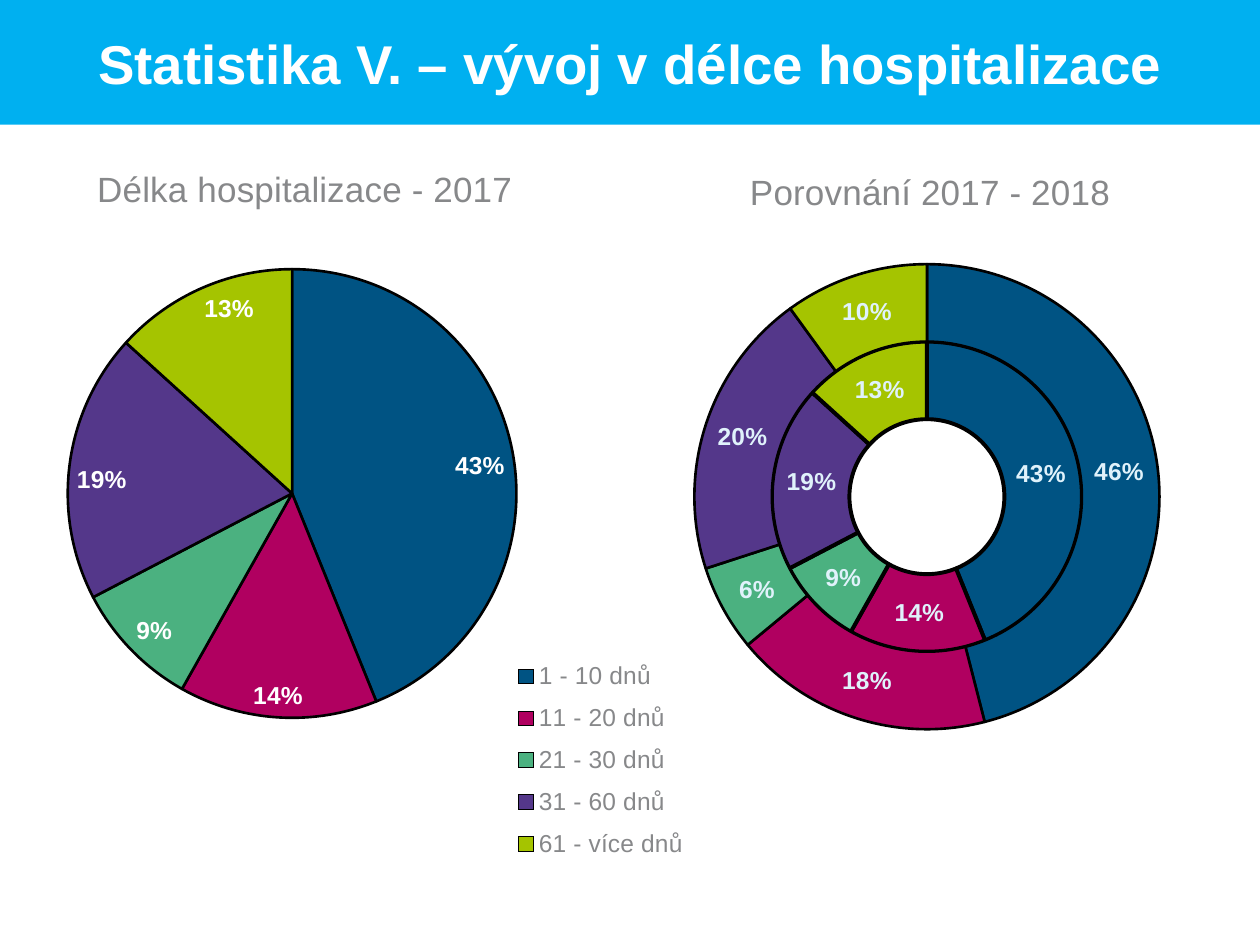
"""Build a slide comparing lengths of hospital stay in 2017 and 2018."""
from pptx import Presentation
from pptx import util as u
from pptx.chart.data import CategoryChartData
from pptx.dml.color import RGBColor
from pptx.enum import chart as charts, shapes, text
from pptx.oxml import parse_xml
from pptx.oxml.ns import nsdecls

GREY = "87888A"
SLICE_COLORS = ["005383", "B00060", "4BB180", "54378A", "A5C400"]
STAYS = ["1 - 10 dnů", "11 - 20 dnů", "21 - 30 dnů", "31 - 60 dnů", "61 - více dnů"]
SHARES_2017 = [43, 14, 9, 19, 13]
SHARES_2018 = [46, 18, 6, 20, 10]


def style_font(font, size, color, bold=False):
    font.name = "Arial"
    font.size = u.Pt(size)
    font.bold = bold
    font.color.rgb = RGBColor.from_string(color)


def set_layout(element, index, extent, inner=False):
    for old in element.xpath("c:layout"):
        element.remove(old)
    target = '<c:layoutTarget val="inner"/>' if inner else ""
    modes = "".join(f'<c:{axis}Mode val="edge"/>' for axis in "xy")
    sizes = "".join(f'<c:{key} val="{value}"/>' for key, value in zip("xywh", extent))
    element.insert(index, parse_xml(
        f'<c:layout {nsdecls("c")}><c:manualLayout>{target}{modes}{sizes}'
        "</c:manualLayout></c:layout>"))


deck = Presentation()
deck.slide_width, deck.slide_height = u.Inches(10), u.Inches(7.5)
page = deck.slides.add_slide(deck.slide_layouts[6])

chart_specs = [
    dict(kind=charts.XL_CHART_TYPE.PIE, frame=(0.28, 0.97, 5.51, 6.14),
         title="Délka hospitalizace - 2017", title_at=(0.08, 0.05),
         plot=(0.04, 0.19, 0.66, 0.58), categories=STAYS,
         rings=[SHARES_2017], lines=[1.5], label_color="FFFFFF",
         legend=(0.68, 0.68, 0.27, 0.29)),
    dict(kind=charts.XL_CHART_TYPE.DOUGHNUT, frame=(5.24, 0.92, 4.41, 5.35),
         title="Porovnání 2017 - 2018", title_at=(0.15, 0.07),
         plot=(0.06, 0.22, 0.84, 0.69), categories=["1", "2", "3", "4", "5"],
         rings=[SHARES_2017, SHARES_2018], lines=[2.25, 1.5], label_color="E0F2FB",
         legend=None),
]

for spec in chart_specs:
    data = CategoryChartData()
    data.categories = spec["categories"]
    for number, shares in enumerate(spec["rings"], 1):
        data.add_series(f"Series {number}", shares)
    frame = [u.Inches(value) for value in spec["frame"]]
    chart = page.shapes.add_chart(spec["kind"], *frame, data).chart
    style_font(chart.font, 18, "000000")

    chart.has_title = True
    chart.chart_title.text_frame.text = spec["title"]
    style_font(chart.chart_title.text_frame.paragraphs[0].runs[0].font, 20, GREY)
    set_layout(chart.element.xpath("c:chart/c:title")[0], 1, spec["title_at"])
    set_layout(chart.element.xpath("c:chart/c:plotArea")[0], 0, spec["plot"], inner=True)

    chart.has_legend = spec["legend"] is not None
    if chart.has_legend:
        chart.legend.position = charts.XL_LEGEND_POSITION.RIGHT
        chart.legend.include_in_layout = False
        style_font(chart.legend.font, 14, GREY)
        set_layout(chart.element.xpath("c:chart/c:legend")[0], 1, spec["legend"])

    plot = chart.plots[0]
    plot.vary_by_categories = True
    for series, line_width in zip(plot.series, spec["lines"]):
        for index, color in enumerate(SLICE_COLORS):
            part = series.points[index].format
            part.fill.solid()
            part.fill.fore_color.rgb = RGBColor.from_string(color)
            part.line.color.rgb = RGBColor.from_string("000000")
            part.line.width = u.Pt(line_width)
        labels = series.data_labels
        labels.show_value = True
        labels.number_format = '0"%"'
        labels.number_format_is_linked = False
        style_font(labels.font, 14, spec["label_color"], bold=True)
        if spec["kind"] == charts.XL_CHART_TYPE.PIE:
            labels.position = charts.XL_LABEL_POSITION.INSIDE_END

    if spec["kind"] == charts.XL_CHART_TYPE.PIE:
        banner = page.shapes.add_shape(
            shapes.MSO_SHAPE.RECTANGLE, 0, 0, deck.slide_width, u.Inches(0.99))
        banner.shadow.inherit = False
        banner.fill.solid()
        banner.fill.fore_color.rgb = RGBColor.from_string("00B0F0")
        banner.line.fill.background()
        banner.text_frame.text = "Statistika V. – vývoj v délce hospitalizace"
        banner.text_frame.vertical_anchor = text.MSO_ANCHOR.MIDDLE
        para = banner.text_frame.paragraphs[0]
        para.alignment = text.PP_ALIGN.CENTER
        style_font(para.runs[0].font, 31.2, "FFFFFF", bold=True)

deck.save("out.pptx")
